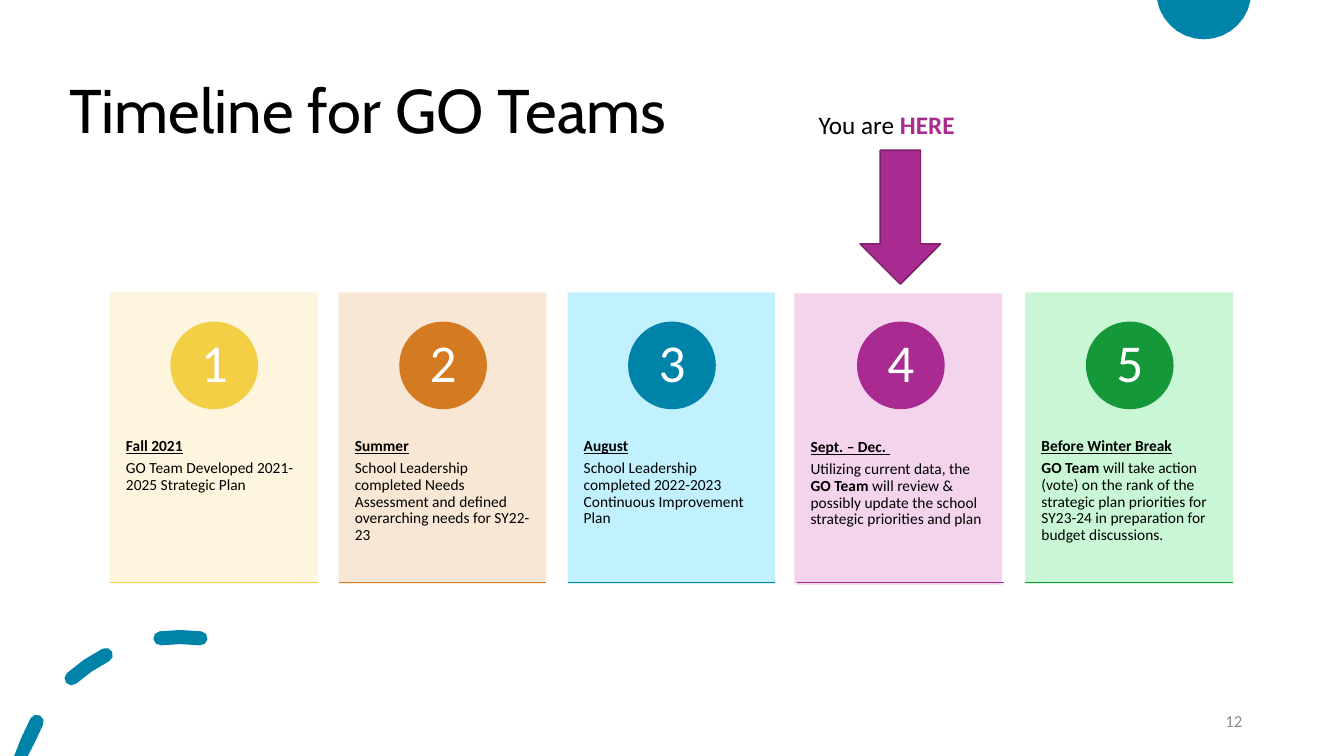
from math import cos, radians, sin

from pptx import Presentation
from pptx import util as u
from pptx.dml import color
from pptx.enum import shapes, text
from pptx.oxml import ns

SLIDE_W, SLIDE_H = 13.33, 7.5
FIRST_LEFT, PITCH = 1.09, 2.27
CARD_TOP, CARD_W, CARD_H = 2.9, 2.06, 2.89
BADGE, DIGIT = 0.87, 0.61
UNITS_PER_INCH = 1000
BLACK, WHITE, TEAL, PURPLE = "000000", "FFFFFF", "0083A9", "A92A91"
PLAIN, BOLD, HEADING = {}, {"bold": True}, {"bold": True, "underline": True}

STEPS = [
    ("FDF5DA", "F3CF45", "Fall 2021",
     [("GO Team Developed 2021-2025 Strategic Plan", PLAIN)]),
    ("F8E5D1", "D47B22", "Summer",
     [("School Leadership completed Needs Assessment and defined "
       "overarching needs for SY22-23", PLAIN)]),
    ("BBF0FF", TEAL, "August",
     [("School Leadership completed 2022-2023 Continuous Improvement Plan", PLAIN)]),
    ("F3CFEC", PURPLE, "Sept. – Dec. ",
     [("Utilizing current data, the ", PLAIN), ("GO Team ", BOLD),
      ("will review & possibly update the school strategic priorities and plan", PLAIN)]),
    ("C4F7D2", "159839", "Before Winter Break",
     [("GO Team ", BOLD),
      ("will take action (vote) on the rank of the strategic plan priorities "
       "for SY23-24 in preparation for budget discussions.", PLAIN)]),
]
CURRENT_STEP = 4


def rgb(value):
    return color.RGBColor.from_string(value)


def inches(*lengths):
    return [u.Inches(length) for length in lengths]


def paint(shape, fill, outline=None, opacity=None):
    shape.shadow.inherit = False
    shape.fill.solid()
    shape.fill.fore_color.rgb = rgb(fill)
    if opacity:
        swatch = shape.fill._xPr.find(".//" + ns.qn("a:srgbClr"))
        swatch.append(swatch.makeelement(ns.qn("a:alpha"), {"val": str(opacity * 1000)}))
    if outline:
        shape.line.color.rgb = rgb(outline)
        shape.line.width = u.Pt(1)
    else:
        shape.line.fill.background()


def add_block(slide, preset, box, fill, **style):
    paint(slide.shapes.add_shape(preset, *inches(*box)), fill, **style)


def add_text(slide, box, paragraphs, size, ink=BLACK, font="Calibri", insets=(0.1, 0.05),
             anchor=text.MSO_ANCHOR.TOP, align=text.PP_ALIGN.LEFT, spacing=0.9, after=0):
    frame = slide.shapes.add_textbox(*inches(*box)).text_frame
    frame.auto_size = text.MSO_AUTO_SIZE.NONE
    frame.word_wrap = True
    frame.vertical_anchor = anchor
    frame.margin_left = frame.margin_right = u.Inches(insets[0])
    frame.margin_top = frame.margin_bottom = u.Inches(insets[1])
    for index, runs in enumerate(paragraphs):
        paragraph = frame.add_paragraph() if index else frame.paragraphs[0]
        paragraph.alignment = align
        paragraph.line_spacing = spacing
        paragraph.space_after = u.Pt(after)
        for words, style in runs:
            run = paragraph.add_run()
            run.text = words
            run.font.name = font
            run.font.size = u.Pt(size)
            run.font.bold = style.get("bold", False)
            run.font.underline = style.get("underline", False)
            run.font.color.rgb = rgb(style.get("ink", ink))


def add_rule(slide, left, top, width, ink):
    rule = slide.shapes.add_connector(
        shapes.MSO_CONNECTOR.STRAIGHT, *inches(left, top, left + width, top))
    rule.line.color.rgb = rgb(ink)
    rule.line.width = u.Pt(1)
    properties = rule._element.spPr
    properties.append(properties.makeelement(ns.qn("a:effectLst"), {}))


def arc(center, radius, start, end, steps):
    angles = [radians(start + (end - start) * i / steps) for i in range(steps + 1)]
    return [(center[0] + radius * cos(a), center[1] - radius * sin(a)) for a in angles]


def dash(center, radius, half, start, end):
    start_cap, end_cap = (arc(center, radius, angle, angle, 1)[0] for angle in (start, end))
    return (arc(center, radius + half, start, end, 2)
            + arc(end_cap, half, end, end + 180, 4)[1:-1]
            + arc(center, radius - half, end, start, 2)
            + arc(start_cap, half, start + 180, start + 360, 4)[1:-1])


def to_units(point):
    x, y = point
    return round(x * UNITS_PER_INCH), round(min(max(y, 0), SLIDE_H) * UNITS_PER_INCH)


def add_outlines(slide, outlines, fill):
    contours = [[to_units(point) for point in outline] for outline in outlines]
    builder = slide.shapes.build_freeform(*contours[0][0], scale=u.Inches(1) / UNITS_PER_INCH)
    for index, points in enumerate(contours):
        if index:
            builder.move_to(*points[0])
        builder.add_line_segments(points[1:], close=True)
    paint(builder.convert_to_shape(), fill)


def add_decoration(slide):
    add_outlines(slide, [arc((11.94, -0.08), 0.47, 190, 350, 14)], TEAL)
    ring = [(151, 166), (117, 131.5), (83, 97)]
    add_outlines(slide, [dash((1.79, 7.95), 1.63, 0.07, *span) for span in ring], TEAL)


def add_step(slide, number, tint, accent, heading, body):
    left = FIRST_LEFT + PITCH * (number - 1)
    current = number == CURRENT_STEP
    card_left = left - 0.02 if current else left
    card_top = CARD_TOP + 0.01 if current else CARD_TOP
    add_block(slide, shapes.MSO_SHAPE.RECTANGLE, (card_left, card_top, CARD_W, CARD_H),
              tint, opacity=90)
    add_text(slide, (card_left, card_top + 1.09, CARD_W, 1.73), [[(heading, HEADING)], body],
             11, insets=(0.16, 0.36), after=3.85)
    badge_left, badge_top = left + 0.6, CARD_TOP + 0.29
    add_block(slide, shapes.MSO_SHAPE.OVAL, (badge_left, badge_top, BADGE, BADGE), accent)
    inner = (BADGE - DIGIT) / 2
    add_text(slide, (badge_left + inner, badge_top + inner, DIGIT, DIGIT),
             [[(str(number), PLAIN)]], 38, WHITE, insets=(0.07, 0.01),
             anchor=text.MSO_ANCHOR.MIDDLE, align=text.PP_ALIGN.CENTER)
    add_rule(slide, left, CARD_TOP + CARD_H - 0.01, CARD_W, accent)


def add_marker(slide):
    add_block(slide, shapes.MSO_SHAPE.DOWN_ARROW, (8.53, 1.49, 0.8, 1.33), PURPLE,
              outline="7D1F6B")
    add_text(slide, (8.02, 1.04, 1.82, 0.4),
             [[("You are ", PLAIN), ("HERE", {"bold": True, "ink": PURPLE})]], 18, spacing=1)


def main():
    deck = Presentation()
    deck.slide_width, deck.slide_height = inches(SLIDE_W, SLIDE_H)
    slide = deck.slides.add_slide(deck.slide_layouts[6])
    add_decoration(slide)
    add_text(slide, (0.59, 0.4, 11.5, 1.45), [[("Timeline for GO Teams", PLAIN)]], 44,
             font="Cabin", anchor=text.MSO_ANCHOR.MIDDLE)
    for number, step in enumerate(STEPS, 1):
        add_step(slide, number, *step)
    add_text(slide, (9.42, 6.95, 3, 0.4), [[("12", PLAIN)]], 12, "8C8C8C",
             anchor=text.MSO_ANCHOR.MIDDLE, align=text.PP_ALIGN.RIGHT, spacing=1)
    add_marker(slide)
    deck.save("out.pptx")


if __name__ == "__main__":
    main()
